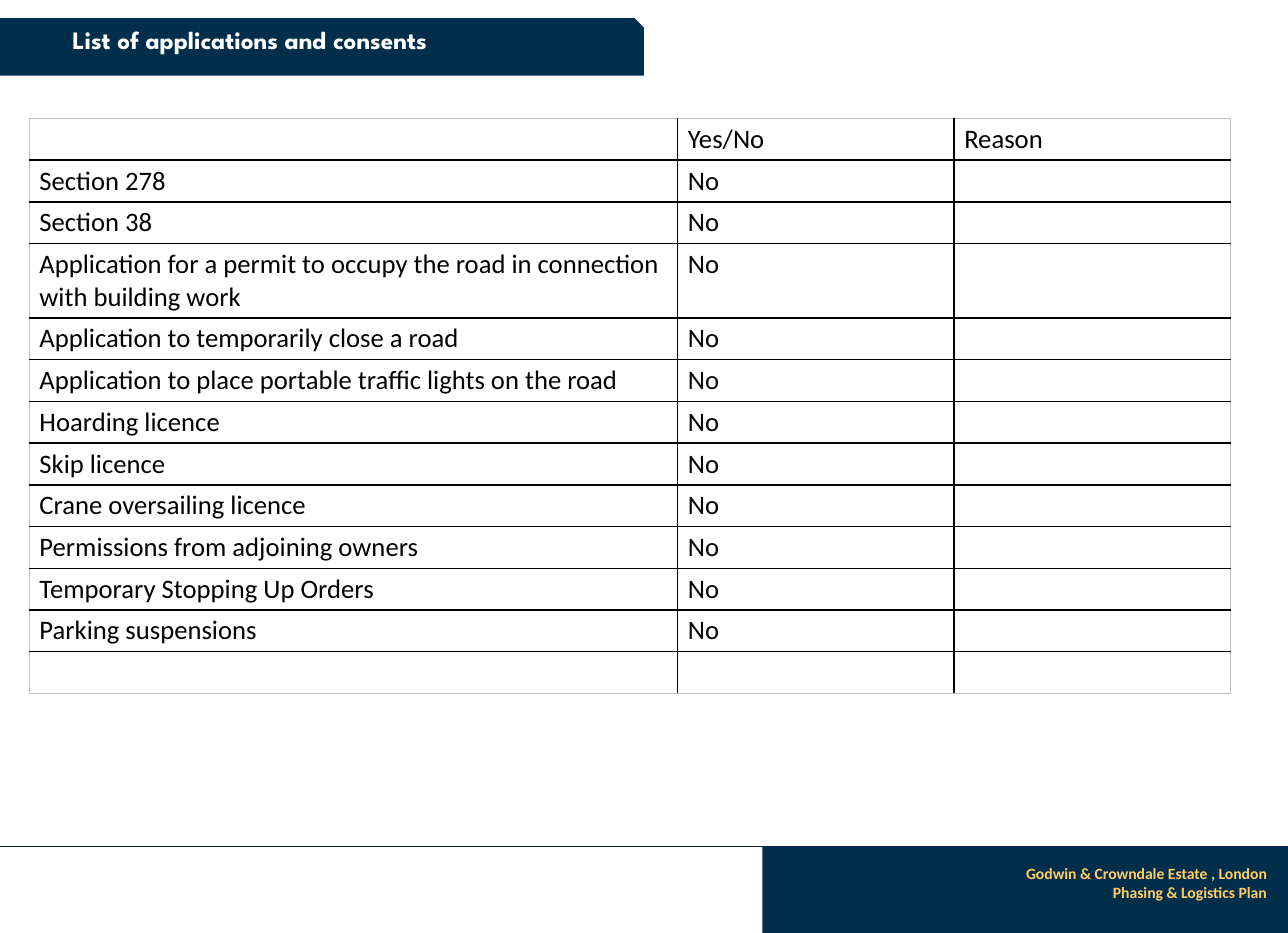
from dataclasses import dataclass

from lxml.etree import SubElement
from pptx import Presentation
from pptx.dml.color import RGBColor
from pptx.enum.shapes import MSO_CONNECTOR, MSO_SHAPE
from pptx.enum.text import MSO_ANCHOR, PP_ALIGN
from pptx.oxml.ns import qn
from pptx.util import Inches, Pt


@dataclass(frozen=True)
class Theme:
    navy: str = "012E4B"
    rule: str = "0F243E"
    gold: str = "FFCC66"
    white: str = "FFFFFF"
    black: str = "000000"
    frame: str = "BFBFBF"
    title_font: str = "League Spartan"
    body_font: str = "Calibri"
    title_size: int = 16
    table_size: int = 17
    footer_size: int = 10


theme = Theme()
WIDTH, HEIGHT = 11.42, 8.27
FOOTER_TOP = 7.5


def add_run(paragraph, text, font_name, size, color, bold=False):
    run = paragraph.add_run()
    run.text = text
    run.font.name = font_name
    run.font.size = Pt(size)
    run.font.bold = bold
    run.font.color.rgb = RGBColor.from_string(color)


def add_border(cell, side, color, width):
    """Draw one side of a table cell: L, R, T or B."""
    properties = cell._tc.get_or_add_tcPr()
    line = SubElement(properties, qn(f"a:ln{side}"), w=str(Pt(width)))
    fill = SubElement(line, qn("a:solidFill"))
    SubElement(fill, qn("a:srgbClr"), val=color)


presentation = Presentation()
presentation.slide_width = Inches(WIDTH)
presentation.slide_height = Inches(HEIGHT)
slide = presentation.slides.add_slide(presentation.slide_layouts[6])

# Title band and footer block
bands = [
    (MSO_SHAPE.RECTANGLE, 6.76, FOOTER_TOP, WIDTH - 6.76, HEIGHT - FOOTER_TOP),
    (MSO_SHAPE.SNIP_1_RECTANGLE, 0, 0.16, WIDTH / 2, 0.51),
]
for preset, *box in bands:
    band = slide.shapes.add_shape(preset, *map(Inches, box))
    band.shadow.inherit = False
    band.fill.solid()
    band.fill.fore_color.rgb = RGBColor.from_string(theme.navy)
    band.line.fill.background()

footer_rule = slide.shapes.add_connector(
    MSO_CONNECTOR.STRAIGHT, 0, Inches(FOOTER_TOP), Inches(WIDTH), Inches(FOOTER_TOP)
)
footer_rule.line.color.rgb = RGBColor.from_string(theme.rule)
footer_rule.line.width = Pt(0.75)
SubElement(footer_rule._element.spPr, qn("a:effectLst"))

# Title and footer text
captions = [
    ((6.82, 7.61, 4.51, 0.44), PP_ALIGN.RIGHT,
     ["Godwin & Crowndale Estate , London", "Phasing & Logistics Plan"],
     (theme.body_font, theme.footer_size, theme.gold)),
    ((0.15, 0.17, 4.13, 0.54), PP_ALIGN.CENTER,
     ["List of applications and consents"],
     (theme.title_font, theme.title_size, theme.white)),
]
for box, alignment, lines, style in captions:
    frame = slide.shapes.add_textbox(*map(Inches, box)).text_frame
    frame.word_wrap = True
    frame.vertical_anchor = MSO_ANCHOR.TOP
    for index, line_text in enumerate(lines):
        paragraph = frame.add_paragraph() if index else frame.paragraphs[0]
        paragraph.alignment = alignment
        add_run(paragraph, line_text, *style, bold=True)

# Table of consents
consents = [
    "Section 278",
    "Section 38",
    "Application for a permit to occupy the road in connection with building work",
    "Application to temporarily close a road",
    "Application to place portable traffic lights on the road",
    "Hoarding licence",
    "Skip licence",
    "Crane oversailing licence",
    "Permissions from adjoining owners",
    "Temporary Stopping Up Orders",
    "Parking suspensions",
]
rows = [("", "Yes/No", "Reason")]
rows += [(consent, "No", "") for consent in consents]
rows.append(("", "", ""))
column_widths = [5.75, 2.45, 2.45]
ROW_HEIGHT, TALL_ROW_HEIGHT, TALL_ROW = 0.37, 0.66, 3
last_row, last_column = len(rows) - 1, len(column_widths) - 1

table = slide.shapes.add_table(
    len(rows), len(column_widths), Inches(0.26), Inches(1.05),
    Inches(sum(column_widths)), Inches(last_row * ROW_HEIGHT + TALL_ROW_HEIGHT),
).table
table.first_row = False
table.horz_banding = False
for column, width in zip(table.columns, column_widths):
    column.width = Inches(width)

for row_index, texts in enumerate(rows):
    height = TALL_ROW_HEIGHT if row_index == TALL_ROW else ROW_HEIGHT
    table.rows[row_index].height = Inches(height)
    for column_index, text in enumerate(texts):
        cell = table.cell(row_index, column_index)
        cell.margin_left = cell.margin_right = Inches(0.09)
        cell.margin_top = cell.margin_bottom = Inches(0.04)
        outer_sides = {
            "L": column_index == 0,
            "R": column_index == last_column,
            "T": row_index == 0,
            "B": row_index == last_row,
        }
        for side, is_outer in outer_sides.items():
            if is_outer:
                add_border(cell, side, theme.frame, 0.75)
            else:
                add_border(cell, side, theme.black, 1)
        cell.fill.background()
        paragraph = cell.text_frame.paragraphs[0]
        if text:
            add_run(paragraph, text, theme.body_font, theme.table_size, theme.black)
        else:
            SubElement(paragraph._p, qn("a:endParaRPr"), sz=str(theme.table_size * 100))

presentation.save("out.pptx")
